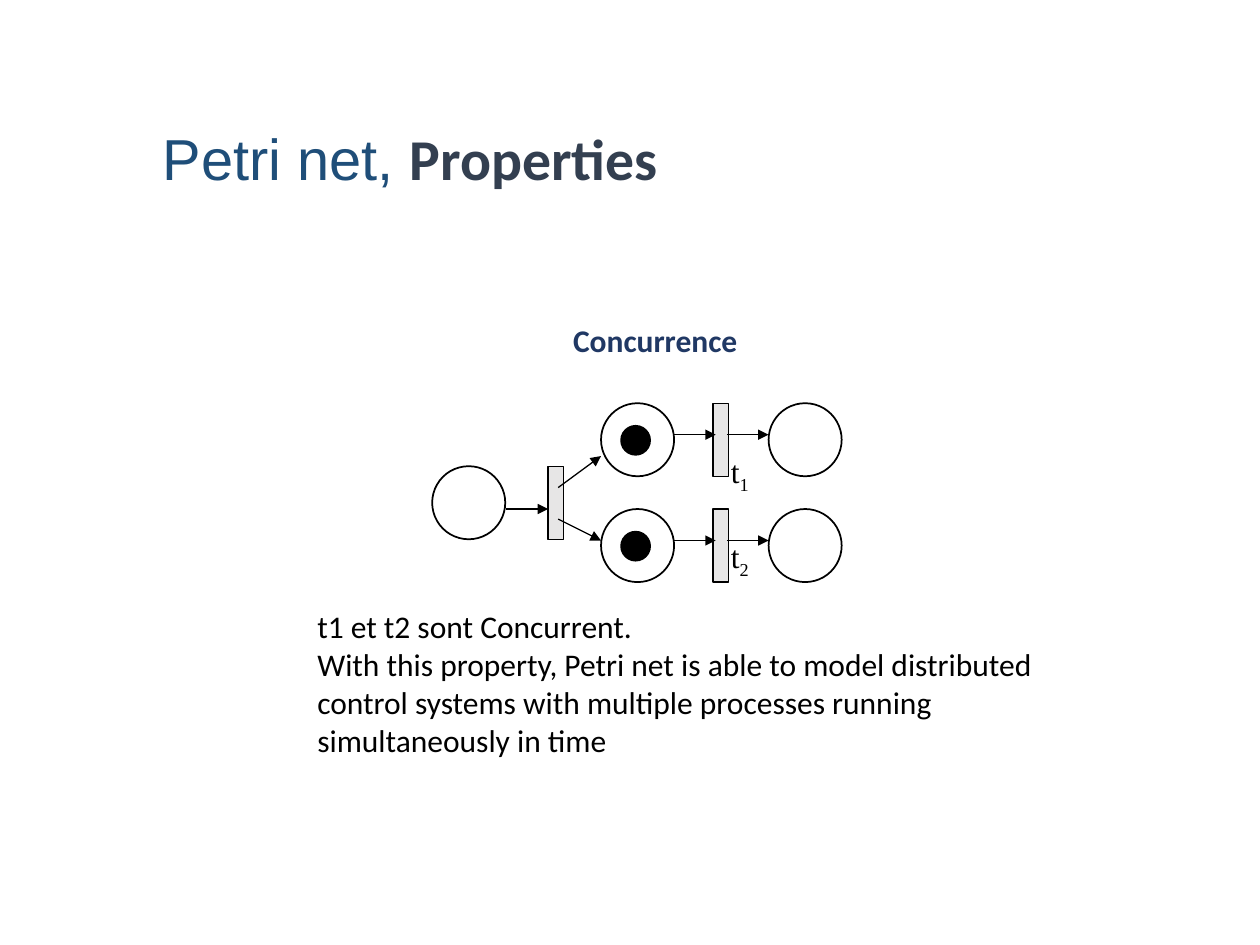
"""Build the Petri net slide that illustrates the concurrence property."""
from lxml import etree
from pptx import Presentation
from pptx.dml.color import RGBColor
from pptx.enum.shapes import MSO_CONNECTOR, MSO_SHAPE
from pptx.enum.text import MSO_ANCHOR, PP_ALIGN
from pptx.oxml.ns import qn
from pptx.util import Inches, Pt

OVAL, RECTANGLE = MSO_SHAPE.OVAL, MSO_SHAPE.RECTANGLE
STRAIGHT = MSO_CONNECTOR.STRAIGHT
MIDDLE, LEFT = MSO_ANCHOR.MIDDLE, PP_ALIGN.LEFT

BLACK = RGBColor(0x00, 0x00, 0x00)
BAR_GREY = RGBColor(0xE7, 0xE6, 0xE6)
TITLE_BLUE = RGBColor(0x1F, 0x4E, 0x79)
TITLE_SLATE = RGBColor(0x33, 0x3F, 0x50)
HEADING_NAVY = RGBColor(0x20, 0x38, 0x64)

NODE = 0.58
BAR = 0.12
TOKEN = 0.23
INPUT_TOP = 3.7
FORK_X, MARKED_X, BRANCH_BAR_X, OUTPUT_X = 4.35, 4.77, 5.66, 6.1


def style_font(font, name, size, color, bold=False):
    font.name = name
    font.size = Pt(size)
    font.color.rgb = color
    font.bold = bold


def add_title(slide):
    title = slide.shapes.title
    title.left, title.top = Inches(1.19), Inches(0.64)
    title.width, title.height = Inches(8.23), Inches(1.29)
    title.text_frame.vertical_anchor = MIDDLE
    heading = title.text_frame.paragraphs[0]
    heading.alignment = LEFT
    heading.line_spacing = 0.9
    topic, aspect = heading.add_run(), heading.add_run()
    topic.text, aspect.text = "Petri net, ", "Properties"
    style_font(topic.font, "Arial", 33, TITLE_BLUE)
    style_font(aspect.font, "Calibri", 33, TITLE_SLATE, bold=True)


def add_text(slide, lines, left, top, width, height, color, bold=False, wrap=True):
    frame = slide.shapes.add_textbox(
        Inches(left), Inches(top), Inches(width), Inches(height)).text_frame
    frame.word_wrap = wrap
    frame.text = "\n".join(lines)
    for paragraph in frame.paragraphs:
        style_font(paragraph.font, "Calibri", 18, color, bold)


def add_node(slide, kind, left, top, width, height, fill=None, weight=1):
    node = slide.shapes.add_shape(
        kind, Inches(left), Inches(top), Inches(width), Inches(height))
    node.shadow.inherit = False
    if fill is None:
        node.fill.background()
    else:
        node.fill.solid()
        node.fill.fore_color.rgb = fill
    node.line.color.rgb = BLACK
    node.line.width = Pt(weight)


def add_place(slide, left, top, marked=False):
    add_node(slide, OVAL, left, top, NODE, NODE)
    if marked:
        add_node(slide, OVAL, left + 0.16, top + 0.18, TOKEN, TOKEN, BLACK)


def add_transition(slide, left, top):
    add_node(slide, RECTANGLE, left, top, BAR, NODE, BAR_GREY, 0.75)


def add_arc(slide, x1, y1, x2, y2):
    arc = slide.shapes.add_connector(
        STRAIGHT, Inches(x1), Inches(y1), Inches(x2), Inches(y2))
    arc.line.color.rgb = BLACK
    arc.line.width = Pt(0.75)
    etree.SubElement(arc.line._get_or_add_ln(), qn("a:tailEnd"), type="triangle")
    etree.SubElement(arc._element.spPr, qn("a:effectLst"))


def add_transition_label(slide, index, top):
    frame = slide.shapes.add_textbox(
        Inches(5.8), Inches(top), Inches(0.25), Inches(0.29)).text_frame
    frame.margin_left = frame.margin_right = 0
    frame.margin_top = frame.margin_bottom = 0
    frame.word_wrap = False
    label = frame.paragraphs[0]
    style_font(label.font, "Times New Roman", 18, BLACK)
    letter, subscript = label.add_run(), label.add_run()
    letter.text, subscript.text = "t", index
    subscript._r.get_or_add_rPr().set("baseline", "-25000")


def add_branch(slide, top, fork_y, entry_y, index, label_top):
    add_arc(slide, FORK_X + 0.08, fork_y, MARKED_X, entry_y)
    add_place(slide, MARKED_X, top, marked=True)
    add_transition(slide, BRANCH_BAR_X, top)
    add_place(slide, OUTPUT_X, top)
    for start in (MARKED_X + NODE, BRANCH_BAR_X + 0.11):
        add_arc(slide, start, top + 0.25, start + 0.33, top + 0.25)
    add_transition_label(slide, index, label_top)


def main():
    prs = Presentation()
    prs.slide_width, prs.slide_height = Inches(10), Inches(7.5)
    slide = prs.slides.add_slide(prs.slide_layouts[5])
    add_title(slide)
    add_text(slide, ["Concurrence"], 4.45, 2.5, 1.7, 0.4,
             HEADING_NAVY, bold=True, wrap=False)
    add_text(slide, [
        "t1 et t2 sont Concurrent.",
        "With this property, Petri net is able to model distributed control "
        "systems with multiple processes running simultaneously in time",
    ], 2.42, 4.77, 6.33, 1.31, BLACK)
    add_place(slide, 3.43, INPUT_TOP)
    add_transition(slide, FORK_X, INPUT_TOP)
    add_arc(slide, 4.02, 4.04, FORK_X, 4.04)
    add_branch(slide, 3.2, 3.87, 3.62, "1", 3.59)
    add_branch(slide, 4.04, 4.12, 4.29, "2", 4.26)
    prs.save("out.pptx")


if __name__ == "__main__":
    main()
